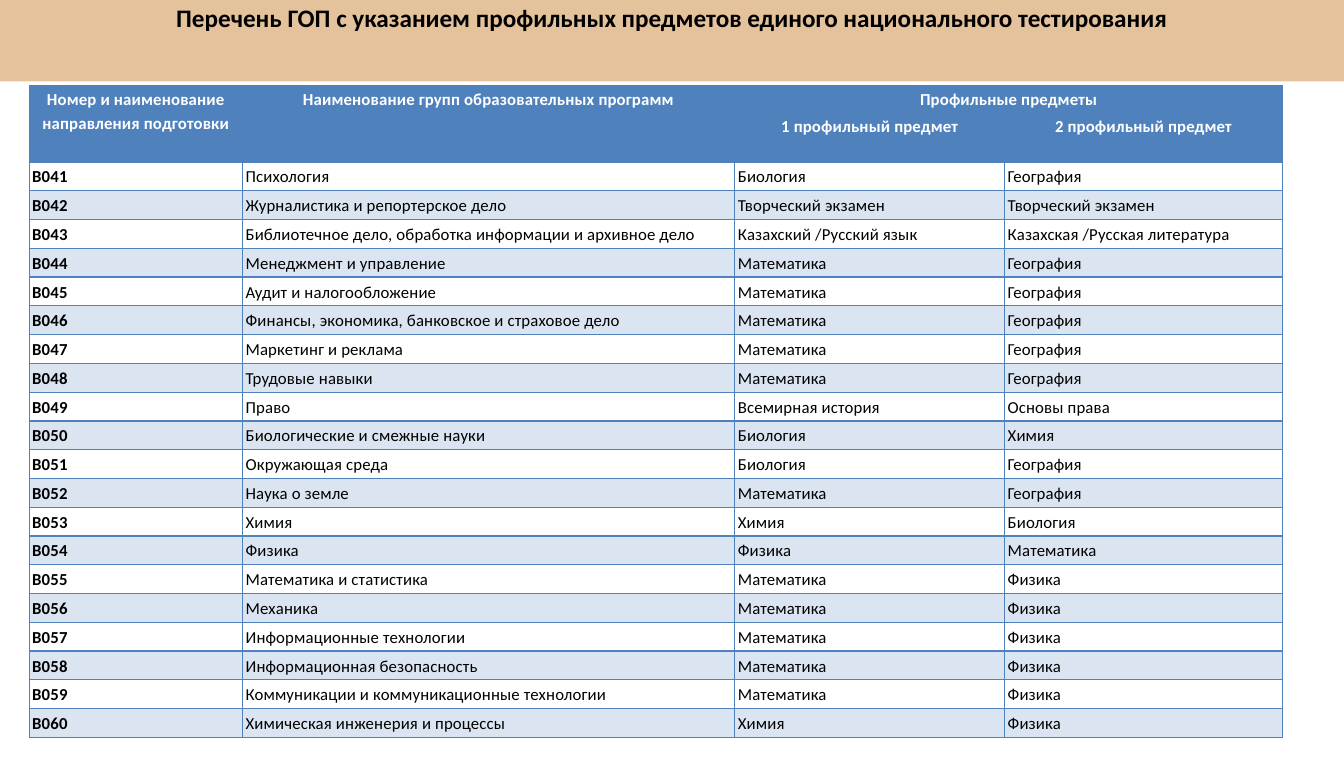
from lxml import etree
from pptx import Presentation
from pptx import util as u
from pptx.dml.color import RGBColor
from pptx.enum import shapes, text
from pptx.oxml import ns

BLUE = RGBColor(0x4F, 0x81, 0xBD)
SAND = RGBColor(0xE4, 0xC2, 0x9C)
WHITE = RGBColor(0xFF, 0xFF, 0xFF)
BLACK = RGBColor(0, 0, 0)

SLIDE_WIDTH, SLIDE_HEIGHT = 13.35, 7.68
COLUMN_WIDTHS = [2.12, 4.89, 2.68, 2.76]
HEADER_HEIGHTS = [0.27, 0.49]
ROW_HEIGHT = 0.286

TITLE = "Перечень ГОП с указанием профильных предметов единого национального тестирования"
HEADERS = [
    # row, column, rows spanned, columns spanned, wording
    (0, 0, 2, 1, "Номер и наименование направления подготовки"),
    (0, 1, 2, 1, "Наименование групп образовательных программ"),
    (0, 2, 1, 2, "Профильные предметы"),
    (1, 2, 1, 1, "1 профильный предмет"),
    (1, 3, 1, 1, "2 профильный предмет"),
]
FIRST_CODE = 41
PROGRAMS = [
    ("Психология", "Биология", "География"),
    ("Журналистика и репортерское дело", "Творческий экзамен", "Творческий экзамен"),
    ("Библиотечное дело, обработка информации и архивное дело",
     "Казахский /Русский язык", "Казахская /Русская литература"),
    ("Менеджмент и управление", "Математика", "География"),
    ("Аудит и налогообложение", "Математика", "География"),
    ("Финансы, экономика, банковское и страховое дело", "Математика", "География"),
    ("Маркетинг и реклама", "Математика", "География"),
    ("Трудовые навыки", "Математика", "География"),
    ("Право", "Всемирная история", "Основы права"),
    ("Биологические и смежные науки", "Биология", "Химия"),
    ("Окружающая среда", "Биология", "География"),
    ("Наука о земле", "Математика", "География"),
    ("Химия", "Химия", "Биология"),
    ("Физика", "Физика", "Математика"),
    ("Математика и статистика", "Математика", "Физика"),
    ("Механика", "Математика", "Физика"),
    ("Информационные технологии", "Математика", "Физика"),
    ("Информационная безопасность", "Математика", "Физика"),
    ("Коммуникации и коммуникационные технологии", "Математика", "Физика"),
    ("Химическая инженерия и процессы", "Химия", "Физика"),
]


class SlideBuilder:
    font_name = "Calibri"

    def __init__(self, presentation):
        self.slide = presentation.slides.add_slide(presentation.slide_layouts[5])

    def format_runs(self, paragraph, size, color, bold):
        for run in paragraph.runs:
            run.font.name = self.font_name
            run.font.size = u.Pt(size)
            run.font.bold = bold
            run.font.color.rgb = color

    def add_band(self, left, top, width, height, color):
        band = self.slide.shapes.add_shape(
            shapes.MSO_SHAPE.RECTANGLE,
            u.Inches(left), u.Inches(top), u.Inches(width), u.Inches(height))
        band.shadow.inherit = False
        band.fill.solid()
        band.fill.fore_color.rgb = color
        band.line.fill.background()

    def place_title(self, wording, left, top, width, height, color):
        title = self.slide.shapes.title
        title.left, title.top = u.Inches(left), u.Inches(top)
        title.width, title.height = u.Inches(width), u.Inches(height)
        title.fill.solid()
        title.fill.fore_color.rgb = color
        frame = title.text_frame
        frame.text = wording
        frame.word_wrap = True
        frame.auto_size = text.MSO_AUTO_SIZE.NONE
        frame.vertical_anchor = text.MSO_ANCHOR.TOP
        frame.margin_left = frame.margin_right = u.Inches(0.12)
        frame.margin_top = frame.margin_bottom = u.Inches(0.02)
        paragraph = frame.paragraphs[0]
        paragraph.alignment = text.PP_ALIGN.CENTER
        self.format_runs(paragraph, 18, BLACK, True)
        # The title comes last so that it lies in front of the band.
        self.slide.shapes._spTree.append(title._element)

    def add_table(self, left, top, column_widths, row_heights):
        table = self.slide.shapes.add_table(
            len(row_heights), len(column_widths), u.Inches(left), u.Inches(top),
            u.Inches(sum(column_widths)), u.Inches(sum(row_heights))).table
        table.first_row = table.horz_banding = False
        for column, width in zip(table.columns, column_widths):
            column.width = u.Inches(width)
        for row, height in zip(table.rows, row_heights):
            row.height = u.Inches(height)
        return table

    def set_borders(self, cell, color, bottom_width):
        properties = cell._tc.get_or_add_tcPr()
        for position, side in enumerate("LRTB"):
            line = etree.Element(ns.qn(f"a:ln{side}"))
            line.set("w", str(u.Pt(bottom_width if side == "B" else 1)))
            fill = etree.SubElement(line, ns.qn("a:solidFill"))
            etree.SubElement(fill, ns.qn("a:srgbClr")).set("val", str(color))
            properties.insert(position, line)

    def fill_cell(self, cell, color, opacity):
        """Fill the cell with color at an opacity in percent; 0 leaves it clear."""
        if not opacity:
            cell.fill.background()
            return
        cell.fill.solid()
        cell.fill.fore_color.rgb = color
        if opacity < 100:
            tint = cell._tc.tcPr.find(".//" + ns.qn("a:srgbClr"))
            etree.SubElement(tint, ns.qn("a:alpha")).set("val", str(opacity * 1000))

    def write_cell(self, cell, wording, color, bold, margins):
        cell.text_frame.text = wording
        cell.margin_left = cell.margin_right = u.Inches(margins[0])
        cell.margin_top = cell.margin_bottom = u.Inches(margins[1])
        paragraph = cell.text_frame.paragraphs[0]
        paragraph.line_spacing = 1.15
        self.format_runs(paragraph, 12, color, bold)
        for run in paragraph.runs:
            run._r.get_or_add_rPr().set("spc", "10")
        return paragraph


def fill_headers(builder, table):
    for row in range(len(HEADER_HEIGHTS)):
        for column in range(len(COLUMN_WIDTHS)):
            cell = table.cell(row, column)
            builder.fill_cell(cell, BLUE, 100)
            builder.set_borders(cell, BLUE, 1 if row and column > 1 else 2)
    for row, column, row_span, column_span, wording in HEADERS:
        cell = table.cell(row, column)
        if row_span * column_span > 1:
            cell.merge(table.cell(row + row_span - 1, column + column_span - 1))
        paragraph = builder.write_cell(cell, wording, WHITE, True, (0.02, 0.01))
        paragraph.alignment = text.PP_ALIGN.CENTER


def fill_programs(builder, table):
    for index, program in enumerate(PROGRAMS):
        code = f"В{FIRST_CODE + index:03}"
        for column, wording in enumerate((code, *program)):
            cell = table.cell(index + len(HEADER_HEIGHTS), column)
            builder.write_cell(cell, wording, BLACK, column == 0, (0.03, 0.02))
            builder.fill_cell(cell, BLUE, 20 if index % 2 else 0)
            builder.set_borders(cell, BLUE, 1)


def main():
    presentation = Presentation()
    presentation.slide_width = u.Inches(SLIDE_WIDTH)
    presentation.slide_height = u.Inches(SLIDE_HEIGHT)
    builder = SlideBuilder(presentation)
    row_heights = HEADER_HEIGHTS + [ROW_HEIGHT] * len(PROGRAMS)
    table = builder.add_table(0.29, 0.85, COLUMN_WIDTHS, row_heights)
    fill_headers(builder, table)
    fill_programs(builder, table)
    builder.add_band(0, 0, SLIDE_WIDTH, 0.81, SAND)
    builder.place_title(TITLE, 0, 0, SLIDE_WIDTH, 0.61, SAND)
    presentation.save("out.pptx")


if __name__ == "__main__":
    main()
